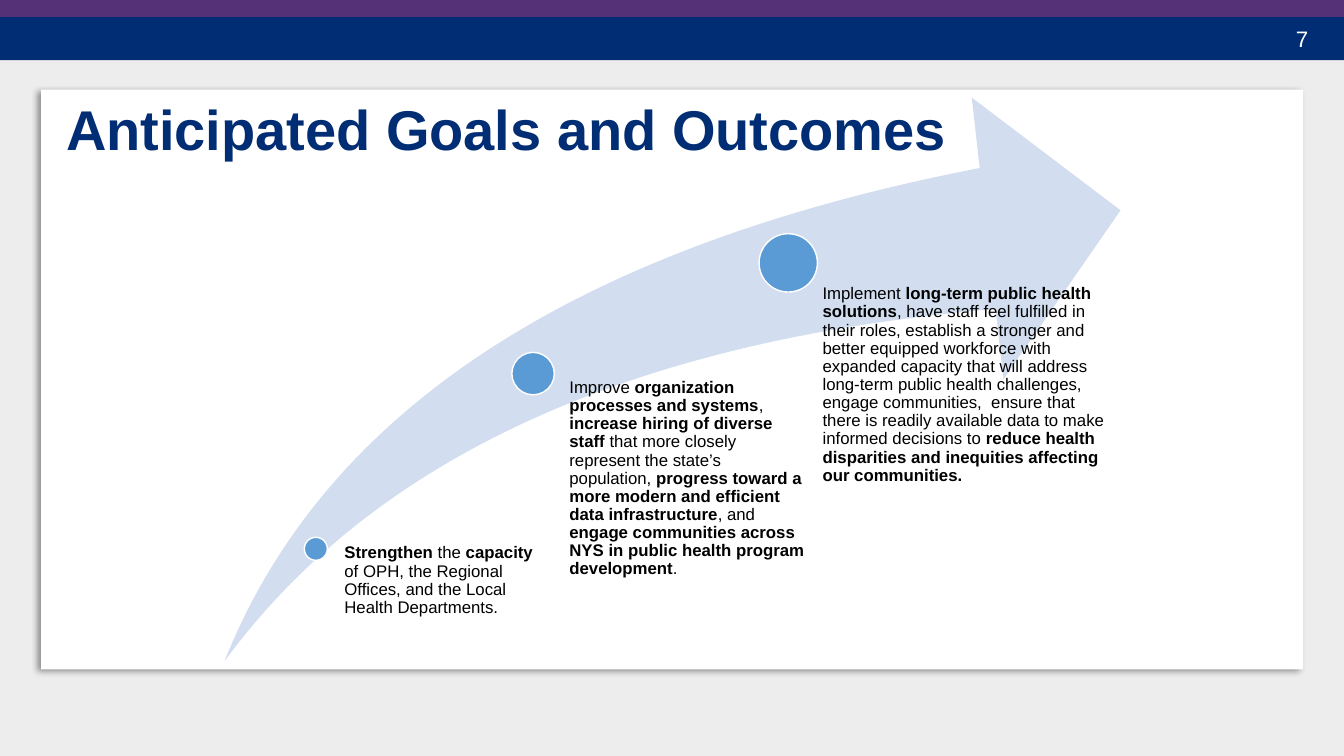
from dataclasses import dataclass

from lxml import etree
from pptx import Presentation
from pptx.dml.color import RGBColor
from pptx.enum.shapes import MSO_SHAPE
from pptx.enum.text import PP_ALIGN
from pptx.oxml.ns import qn
from pptx.util import Cm, Pt

RECT, OVAL, SWOOSH = MSO_SHAPE.RECTANGLE, MSO_SHAPE.OVAL, MSO_SHAPE.SWOOSH_ARROW
LEFT, RIGHT = PP_ALIGN.LEFT, PP_ALIGN.RIGHT


@dataclass(frozen=True)
class Theme:
    font: str = "Arial"
    back: str = "EDEDED"
    navy: str = "002D73"
    plum: str = "553278"
    white: str = "FFFFFF"
    black: str = "000000"
    pale: str = "D2DEEF"
    blue: str = "5B9BD5"
    title: int = 40
    number: int = 16
    body: int = 12


@dataclass(frozen=True)
class Box:
    left: float
    top: float
    width: float
    height: float

    def lengths(self) -> tuple:
        return Cm(self.left), Cm(self.top), Cm(self.width), Cm(self.height)


@dataclass(frozen=True)
class Goal:
    dot: Box
    box: Box
    inset: float
    text: str  # asterisks enclose bold words


THEME = Theme()
WIDTH, HEIGHT = 33.87, 19.05

GOALS = [
    Goal(Box(7.67, 13.54, 0.58, 0.58), Box(8.38, 13.72, 5.44, 1.14), 0.3,
         "*Strengthen* the *capacity* of OPH, the Regional Offices, "
         "and the Local Health Departments."),
    Goal(Box(12.9, 8.88, 1.07, 1.07), Box(13.79, 9.55, 6.5, 4.78), 0.56,
         "Improve *organization processes and systems*, "
         "*increase hiring of diverse staff *that more closely represent "
         "the state’s population, *progress toward a more modern and "
         "efficient data infrastructure*, and *engage communities across "
         "NYS in public health program development*. "),
    Goal(Box(19.13, 5.89, 1.47, 1.47), Box(19.94, 7.19, 8.1, 6.53), 0.79,
         "Implement *long-term public health solutions*, have staff feel "
         "fulfilled in their roles, establish a stronger and better equipped "
         "workforce with expanded capacity that will address long-term public "
         "health challenges, engage communities,  ensure that there is "
         "readily available data to make informed decisions to *reduce health "
         "disparities and inequities affecting our communities.*"),
]


def add_form(slide, kind, box: Box, fill: str, line: str = ""):
    form = slide.shapes.add_shape(kind, *box.lengths())
    form.shadow.inherit = False
    form.fill.solid()
    form.fill.fore_color.rgb = RGBColor.from_string(fill)
    if line:
        form.line.color.rgb = RGBColor.from_string(line)
        form.line.width = Pt(1)
    else:
        form.line.fill.background()
    return form


def add_shade(form) -> None:
    """Soft shadow towards the lower left."""
    effects = form._element.spPr.find(qn("a:effectLst"))
    shade = etree.SubElement(effects, qn("a:outerShdw"), blurRad=str(Pt(4)),
                             dist=str(Pt(3)), dir=str(135 * 60000),
                             algn="tr", rotWithShape="0")
    color = etree.SubElement(shade, qn("a:srgbClr"), val=THEME.black)
    etree.SubElement(color, qn("a:alpha"), val="40000")


def add_text(slide, box: Box, text: str, size: int, color: str,
             align=LEFT, space: float = 0.9):
    frame = slide.shapes.add_textbox(*box.lengths()).text_frame
    frame.word_wrap = True
    para = frame.paragraphs[0]
    para.alignment = align
    para.line_spacing = space
    para.font.name = THEME.font
    para.font.size = Pt(size)
    para.font.color.rgb = RGBColor.from_string(color)
    for index, part in enumerate(text.split("*")):
        if part:
            run = para.add_run()
            run.text = part
            run.font.bold = index % 2 == 1
    return frame


def add_goal(slide, goal: Goal) -> None:
    add_form(slide, OVAL, goal.dot, THEME.blue, THEME.white)
    frame = add_text(slide, goal.box, goal.text, THEME.body, THEME.black)
    frame.margin_left = Cm(goal.inset)
    frame.margin_top = frame.margin_right = frame.margin_bottom = 0


def main() -> None:
    deck = Presentation()
    deck.slide_width, deck.slide_height = Cm(WIDTH), Cm(HEIGHT)
    slide = deck.slides.add_slide(deck.slide_layouts[6])
    slide.background.fill.solid()
    slide.background.fill.fore_color.rgb = RGBColor.from_string(THEME.back)

    # Header bands and page number
    add_form(slide, RECT, Box(0, 0.43, WIDTH, 1.09), THEME.navy)
    add_form(slide, RECT, Box(0, 0, WIDTH, 0.43), THEME.plum)
    add_text(slide, Box(23.95, 0.51, 9.27, 0.94), "7", THEME.number,
             THEME.white, RIGHT, 1.0)

    # White card
    card = add_form(slide, RECT, Box(1.04, 2.26, 31.8, 14.61), THEME.white)
    add_shade(card)

    # Rising arrow with its goals
    arrow = add_form(slide, SWOOSH, Box(5.66, 2.46, 22.58, 14.2), THEME.pale)
    arrow.adjustments[0] = arrow.adjustments[1] = 0.25
    for goal in GOALS:
        add_goal(slide, goal)

    # Title
    add_text(slide, Box(1.42, 2.44, 29.62, 9.73),
             "*Anticipated Goals and Outcomes*", THEME.title, THEME.navy)

    deck.save("out.pptx")


if __name__ == "__main__":
    main()
